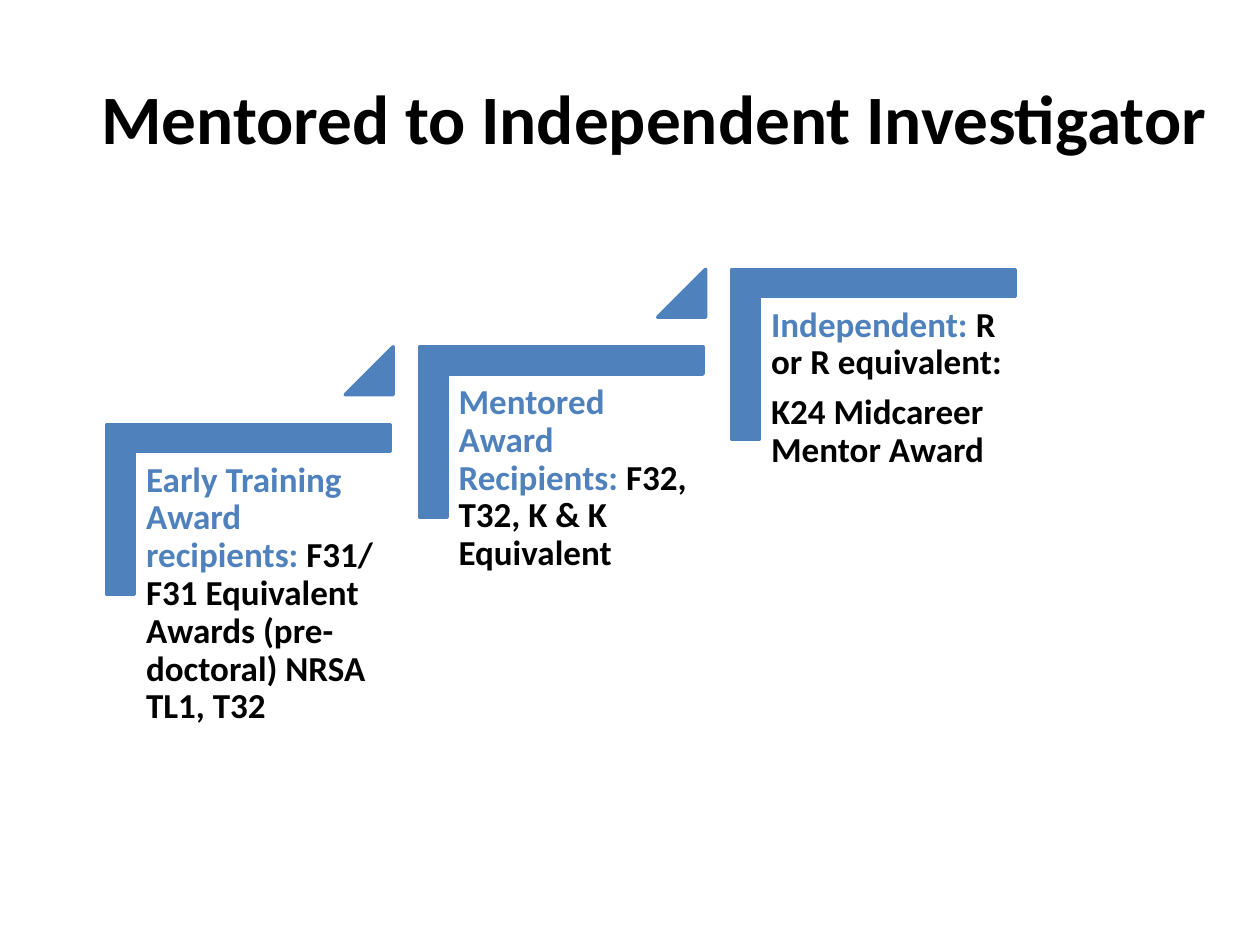
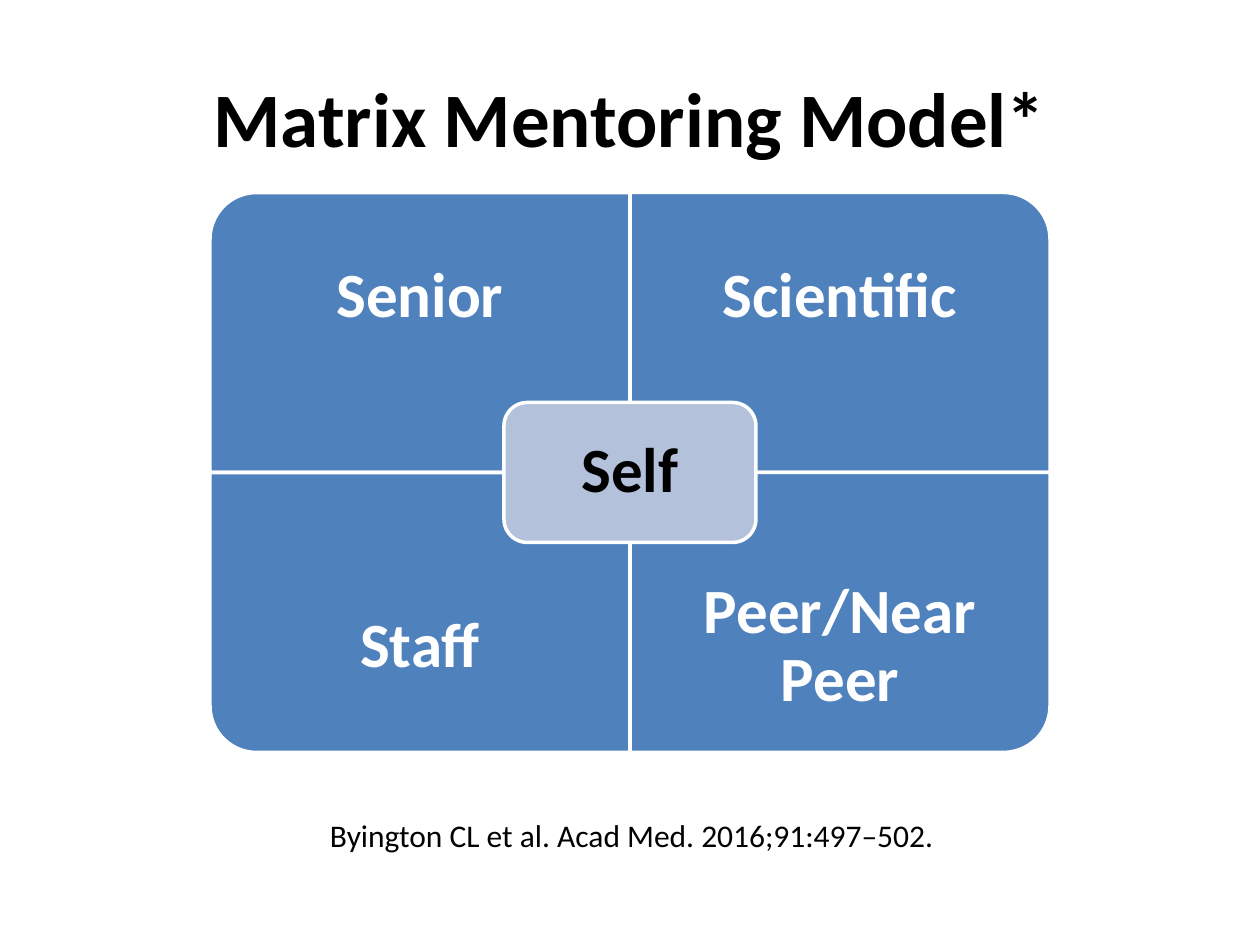
"""Build two slides on mentoring: a career staircase and a matrix model."""
from pptx import Presentation
from pptx.dml.color import RGBColor
from pptx.enum.shapes import MSO_SHAPE
from pptx.enum.text import MSO_ANCHOR, MSO_AUTO_SIZE, PP_ALIGN
from pptx.util import Inches, Pt

BLUE = RGBColor(0x4F, 0x81, 0xBD)
PALE = RGBColor(0xB3, 0xC1, 0xDB)
WHITE = RGBColor(0xFF, 0xFF, 0xFF)
BLACK = RGBColor(0, 0, 0)
FONT = "Calibri"
TRIANGLE = MSO_SHAPE.ISOSCELES_TRIANGLE
ROUND_ONE, ROUND_ALL = MSO_SHAPE.ROUND_1_RECTANGLE, MSO_SHAPE.ROUNDED_RECTANGLE
MIDDLE, TOP = MSO_ANCHOR.MIDDLE, MSO_ANCHOR.TOP
CENTER, LEFT = PP_ALIGN.CENTER, PP_ALIGN.LEFT
NO_FIT = MSO_AUTO_SIZE.NONE

prs = Presentation()
prs.slide_width, prs.slide_height = Inches(10), Inches(7.5)
W, H = prs.slide_width, prs.slide_height


def paint(sp, fill, line):
    """Give a shape a plain fill and outline."""
    sp.shadow.inherit = False
    sp.fill.solid()
    sp.fill.fore_color.rgb = fill
    sp.line.color.rgb = line
    sp.line.width = Pt(2)


def add_text(s, x, y, w, h, paragraphs, size, inset, bold=True,
             align=CENTER, anchor=MIDDLE, spacing=0.9):
    """Add a text box; each paragraph is a list of (text, colour) runs."""
    tf = s.shapes.add_textbox(int(x), int(y), int(w), int(h)).text_frame
    tf.word_wrap = True
    tf.vertical_anchor = anchor
    tf.margin_left = tf.margin_right = tf.margin_top = tf.margin_bottom = Inches(inset)
    for i, runs in enumerate(paragraphs):
        p = tf.add_paragraph() if i else tf.paragraphs[0]
        p.alignment, p.line_spacing = align, spacing
        p.space_before = Pt(0.35 * size if i else 0)
        p.font.name, p.font.size, p.font.bold = FONT, Pt(size), bold
        for text, color in runs:
            r = p.add_run()
            r.text = text
            r.font.color.rgb = color


slides = []
for text, size, width in [("Mentored to Independent Investigator", 39.6, 0.938),
                          ("Matrix Mentoring Model*", 44, 0.9)]:
    s = prs.slides.add_slide(prs.slide_layouts[5])
    title = s.shapes.title
    title.left, title.top = int(0.05 * W), int(0.04 * H)
    title.width, title.height = int(width * W), int(H / 6)
    tf = title.text_frame
    tf.text = text
    tf.auto_size, tf.vertical_anchor = NO_FIT, MIDDLE
    p = tf.paragraphs[0]
    p.alignment = CENTER
    p.font.name, p.font.size, p.font.bold = FONT, Pt(size), True
    p.font.color.rgb = BLACK
    slides.append(s)
stairs, matrix = slides

steps = [
    [[("Early Training Award recipients: ", BLUE),
      ("F31/ F31 Equivalent Awards (pre-doctoral) NRSA TL1, T32", BLACK)]],
    [[("Mentored Award Recipients: ", BLUE), ("F32, T32, K & K Equivalent", BLACK)]],
    [[("Independent: ", BLUE), ("R or R equivalent:", BLACK)],
     [("K24 Midcareer Mentor Award", BLACK)]],
]
step_w, step_h = int(0.225 * W), int(0.18 * H)
bar = int(0.16 * step_h)
arrow = int(0.038 * W)
for i, paragraphs in enumerate(steps):
    x, y = int((0.085 + 0.248 * i) * W), int((0.449 - 0.082 * i) * H)
    outline = stairs.shapes.build_freeform(x, y)
    outline.add_line_segments([
        (x + step_w, y), (x + step_w, y + bar), (x + bar, y + bar),
        (x + bar, y + step_h), (x, y + step_h)])
    paint(outline.convert_to_shape(), BLUE, BLUE)
    add_text(stairs, x + 0.023 * W, y + 0.029 * H, 0.203 * W, 0.237 * H,
             paragraphs, 20, 0.08, align=LEFT, anchor=TOP)
    if i < len(steps) - 1:
        sp = stairs.shapes.add_shape(TRIANGLE, x + step_w - arrow + int(0.002 * W),
                                     y - int(0.082 * H), arrow, arrow)
        sp.adjustments[0] = 1
        paint(sp, BLUE, BLUE)

cell_w = W / 3
cell_h = cell_w * 2 / 3
label_h = cell_h * 0.75
quadrants = [("Senior", -1, -1, 270), ("Scientific", 1, -1, 0),
             ("Staff", -1, 1, 180), ("Peer/Near Peer", 1, 1, 90)]
for label, col, row, rotation in quadrants:
    cx, cy = W / 2 + col * cell_w / 2, H / 2 + row * cell_h / 2
    w, h = (cell_h, cell_w) if rotation % 180 else (cell_w, cell_h)
    sp = matrix.shapes.add_shape(ROUND_ONE, int(cx - w / 2), int(cy - h / 2),
                                 int(w), int(h))
    sp.rotation = rotation
    paint(sp, BLUE, WHITE)
    label_y = cy + row * (cell_h - label_h) / 2 - label_h / 2
    add_text(matrix, cx - cell_w / 2, label_y, cell_w, label_h,
             [[(label, WHITE)]], 36, 0.28)

self_w, self_h = int(cell_w * 0.6), int(cell_h / 2)
self_x, self_y = (W - self_w) // 2, (H - self_h) // 2
paint(matrix.shapes.add_shape(ROUND_ALL, self_x, self_y, self_w, self_h), PALE, WHITE)
add_text(matrix, self_x, self_y, self_w, self_h, [[("Self", BLACK)]], 36, 0.15)
add_text(matrix, 0.252 * W, 0.85 * H, 0.511 * W, 0.095 * H,
         [[("Byington CL et al. Acad Med. 2016;91:497–502.", BLACK)]],
         18, 0.1, bold=False, align=LEFT, anchor=TOP, spacing=1)

prs.save("out.pptx")
